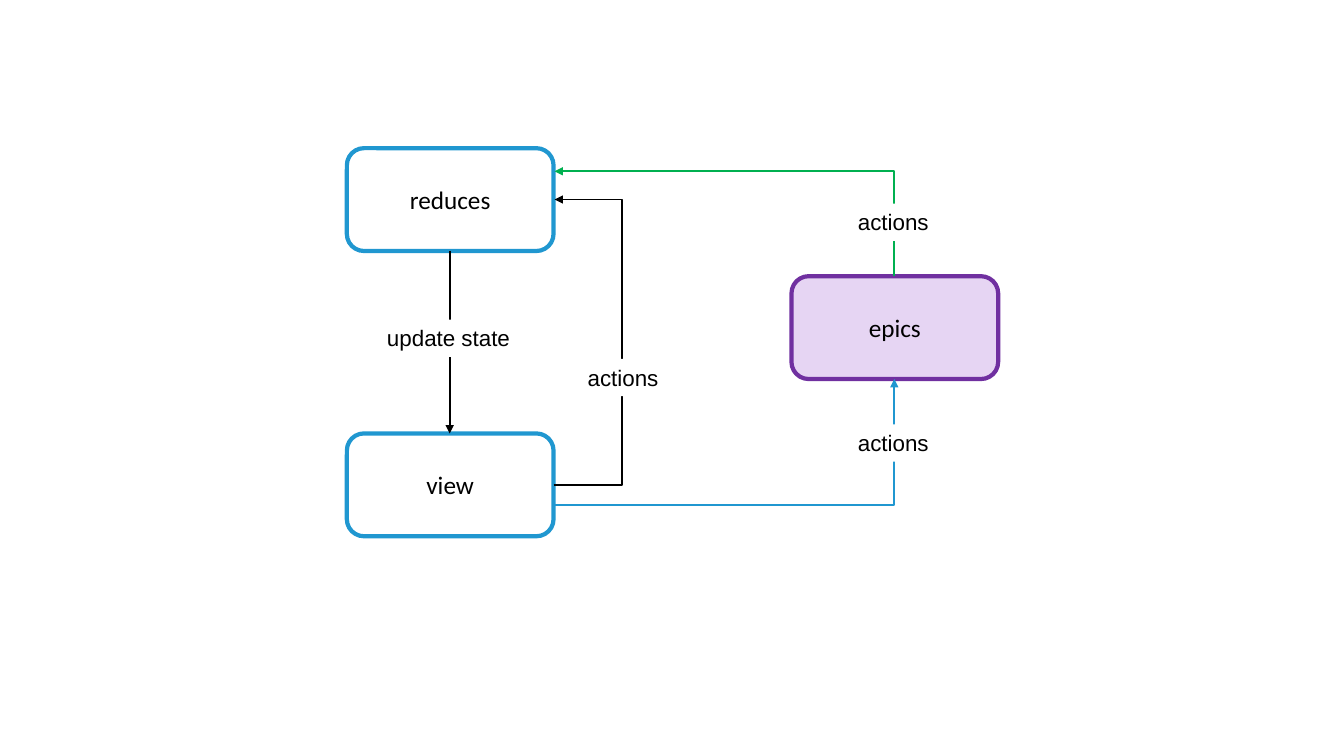
import pptx
import pptx.util
import pptx.dml.color
import pptx.enum.shapes
import pptx.enum.text
import pptx.oxml
import pptx.oxml.ns
from pptx.util import Inches

BLACK, WHITE, BLUE, GREEN = "000000", "FFFFFF", "2097D0", "00B050"
PURPLE, LILAC = "7030A0", "E6D5F3"
KIND = pptx.enum.shapes.MSO_CONNECTOR


def paint(target, color):
    """Give a fill a solid colour."""
    target.solid()
    target.fore_color.rgb = pptx.dml.color.RGBColor.from_string(color)


def write(frame, text, font, size):
    run = frame.paragraphs[0].add_run()
    run.text = text
    run.font.name = font
    run.font.size = pptx.util.Pt(size)
    paint(run.font.fill, BLACK)


def node(slide, text, left, top, fill, line):
    shape = slide.shapes.add_shape(
        pptx.enum.shapes.MSO_SHAPE.ROUNDED_RECTANGLE,
        Inches(left), Inches(top), Inches(2.05), Inches(1.02))
    shape.shadow.inherit = False
    paint(shape.fill, fill)
    paint(shape.line.fill, line)
    shape.line.width = pptx.util.Pt(3)
    frame = shape.text_frame
    frame.vertical_anchor = pptx.enum.text.MSO_ANCHOR.MIDDLE
    frame.paragraphs[0].alignment = pptx.enum.text.PP_ALIGN.CENTER
    write(frame, text, "Calibri", 18)


def label(slide, text, left, top, width=0.91):
    box = slide.shapes.add_textbox(
        Inches(left), Inches(top), Inches(width), Inches(0.37))
    paint(box.fill, WHITE)
    frame = box.text_frame
    frame.word_wrap = False
    frame.auto_size = pptx.enum.text.MSO_AUTO_SIZE.SHAPE_TO_FIT_TEXT
    write(frame, text, "Arial", 16)


def arrow(slide, kind, start, end, color, tip="tailEnd"):
    """Draw a connector with its arrowhead at the end named by tip."""
    link = slide.shapes.add_connector(kind, *map(Inches, start + end))
    paint(link.line.fill, color)
    link.line.width = pptx.util.Pt(1.25)
    props = link._element.spPr
    head = pptx.oxml.ns.qn("a:" + tip)
    props.find(pptx.oxml.ns.qn("a:ln")).makeelement(head)
    line = props.find(pptx.oxml.ns.qn("a:ln"))
    line.append(line.makeelement(head, {"type": "triangle"}))
    props.append(props.makeelement(pptx.oxml.ns.qn("a:effectLst")))
    return link


def corner(slide, start, end, color, tip="tailEnd"):
    """Draw an arrow with one bend, level at its start."""
    link = arrow(slide, KIND.ELBOW, start, end, color, tip)
    link._element.spPr.prstGeom.set("prst", "bentConnector2")


def loop(slide, start, end, turn, color):
    """Draw an arrow that runs out to x = turn and comes back."""
    link = arrow(slide, KIND.ELBOW, start, end, color)
    ratio = (turn - start[0]) / (end[0] - start[0])
    guides = link._element.spPr.prstGeom.get_or_add_avLst()
    guides.append(guides.makeelement(
        pptx.oxml.ns.qn("a:gd"),
        {"name": "adj1", "fmla": f"val {round(ratio * 100000)}"}))


def main():
    deck = pptx.Presentation()
    deck.slide_width, deck.slide_height = Inches(13.33), Inches(7.5)
    slide = deck.slides.add_slide(deck.slide_layouts[6])

    node(slide, "reduces", 3.44, 1.47, WHITE, BLUE)
    node(slide, "view", 3.44, 4.3, WHITE, BLUE)
    node(slide, "epics", 7.85, 2.74, LILAC, PURPLE)

    arrow(slide, KIND.STRAIGHT, (4.46, 2.49), (4.46, 4.3), BLACK)
    label(slide, "update state", 3.74, 3.17, 1.44)
    loop(slide, (5.49, 4.81), (5.5, 1.98), 6.18, BLACK)
    label(slide, "actions", 5.73, 3.56)
    corner(slide, (5.5, 5.01), (8.87, 3.76), BLUE)
    label(slide, "actions", 8.41, 4.21)
    corner(slide, (5.5, 1.7), (8.87, 2.74), GREEN, "headEnd")
    label(slide, "actions", 8.41, 2.02)

    deck.save("out.pptx")


if __name__ == "__main__":
    main()
